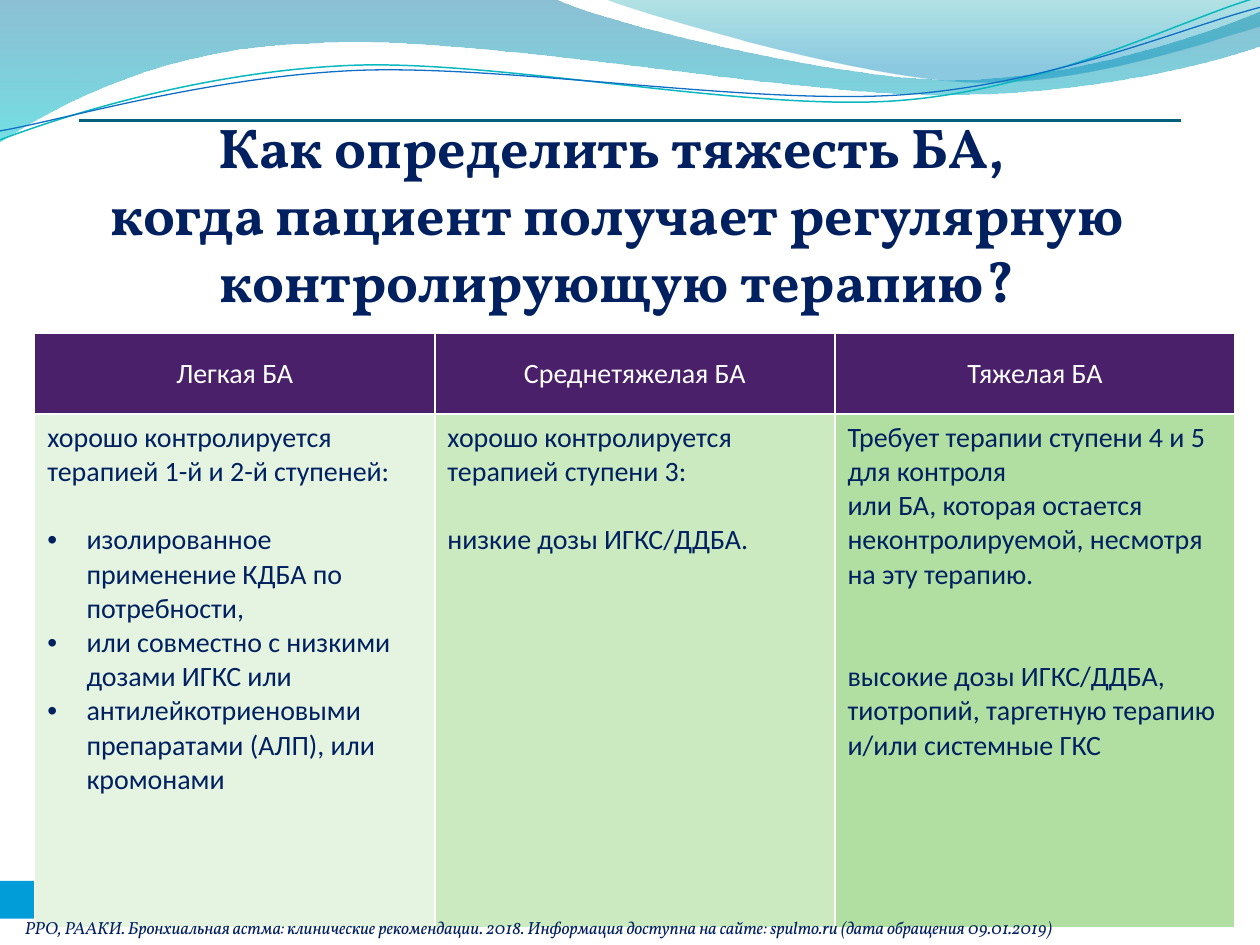
from dataclasses import dataclass
from typing import Optional

from lxml.etree import SubElement
from pptx import Presentation
from pptx.dml.color import RGBColor
from pptx.enum.shapes import MSO_CONNECTOR, MSO_SHAPE
from pptx.enum.text import MSO_ANCHOR, PP_ALIGN
from pptx.oxml import parse_xml
from pptx.oxml.ns import nsdecls, qn
from pptx.util import Cm, Pt


@dataclass(frozen=True)
class Theme:
    navy: str = "002060"
    white: str = "FFFFFF"
    header: str = "4A206A"
    accent: str = "009DD9"
    rule: str = "04617B"
    serif: str = "Vollkorn"
    sans: str = "Calibri"
    title_size: float = 32
    table_size: float = 16
    source_size: float = 10
    blank_line: float = 19.5


@dataclass(frozen=True)
class Stop:
    position: float
    color: str
    opacity: int


@dataclass(frozen=True)
class Wave:
    """A path in cm; a segment of one point is straight, of three is a Bezier curve."""
    start: tuple
    segments: tuple
    stops: tuple = ()
    line: Optional[str] = None
    width: float = 0


@dataclass(frozen=True)
class Entry:
    text: str
    bullet: bool = False
    lines_before: int = 0


@dataclass(frozen=True)
class Severity:
    name: str
    color: str
    entries: tuple


THEME = Theme()

WAVES = (
    Wave((0, 0), (
        ((11.18, -0.03),),
        ((12.09, 0.43), (16.87, 1.6), (19.25, 1.6)),
        ((21.67, 1.6), (24.33, 0.66), (25.4, 0.23)),
        ((25.43, 0.91),),
        ((24.97, 1.12), (22.1, 1.93), (18.95, 1.91)),
        ((15.8, 1.91), (9.7, 0.71), (6.53, 0.86)),
        ((3.28, 0.91), (1.17, 2.11), (-0.03, 2.87)),
        ((0, 0),),
    ), stops=(Stop(0, "0074A1", 45), Stop(1, "00C6CF", 55))),
    Wave((12.17, -0.03), (
        ((12.93, 0.28), (17.32, 1.57), (19.53, 1.65)),
        ((21.74, 1.75), (24.41, 0.81), (25.4, 0.53)),
        ((25.4, 0),),
        ((12.17, -0.03),),
    ), stops=(Stop(0, "00A1A9", 30), Stop(0.8, "008BBF", 45))),
    Wave((0, 2.82), (
        ((1.22, 2.36), (4.01, 1.45), (7.04, 1.32)),
        ((10.03, 1.19), (15.06, 2.26), (18.11, 2.03)),
        ((21.16, 1.8), (23.83, 0.38), (25.35, -0.05)),
    ), line="0AB8BF", width=0.85),
    Wave((0, 2.64), (
        ((1.19, 2.44), (4.17, 1.55), (7.19, 1.42)),
        ((10.24, 1.3), (15.16, 2.13), (18.21, 1.91)),
        ((21.23, 1.7), (23.9, 0.53), (25.4, 0.15)),
    ), line="0F6FC6", width=0.75),
)

SEVERITIES = (
    Severity("Легкая БА", "E5F4E0", (
        Entry("хорошо контролируется терапией 1-й и 2-й ступеней:"),
        Entry("изолированное применение КДБА по потребности,", True, 1),
        Entry("или совместно с низкими дозами ИГКС или", True),
        Entry("антилейкотриеновыми препаратами (АЛП), или кромонами", True),
    )),
    Severity("Среднетяжелая БА", "CBEAC0", (
        Entry("хорошо контролируется терапией ступени 3:"),
        Entry("низкие дозы ИГКС/ДДБА.", lines_before=1),
    )),
    Severity("Тяжелая БА", "B0DFA1", (
        Entry("Требует терапии ступени 4 и 5 для контроля"),
        Entry("или БА, которая остается неконтролируемой, несмотря на эту терапию."),
        Entry("высокие дозы ИГКС/ДДБА, тиотропий, таргетную терапию "
              "и/или системные ГКС", lines_before=2),
    )),
)


def rgb(color: str) -> RGBColor:
    return RGBColor.from_string(color)


def bend_segments(shape, segments: tuple) -> None:
    """Turn the straight steps of a freeform into Bezier curves where three points are given."""
    steps = list(shape.element.iter(qn("a:lnTo")))
    for step, segment in zip(steps, segments):
        if len(segment) == 3:
            points = "".join(f'<a:pt x="{Cm(x) - shape.left}" y="{Cm(y) - shape.top}"/>'
                             for x, y in segment)
            curve = parse_xml(f'<a:cubicBezTo {nsdecls("a")}>{points}</a:cubicBezTo>')
            step.getparent().replace(step, curve)


def draw_wave(page, wave: Wave) -> None:
    builder = page.shapes.build_freeform(*(Cm(value) for value in wave.start))
    ends = [(Cm(x), Cm(y)) for x, y in (segment[-1] for segment in wave.segments)]
    builder.add_line_segments(ends, close=bool(wave.stops))
    shape = builder.convert_to_shape()
    bend_segments(shape, wave.segments)
    shape.shadow.inherit = False
    if wave.stops:
        shape.line.fill.background()
        shape.fill.gradient()
        shape.fill.gradient_angle = 270
        for target, stop in zip(shape.fill.gradient_stops, wave.stops):
            target.color.rgb = rgb(stop.color)
            target.position = stop.position
        for node, stop in zip(shape.element.spPr.iter(qn("a:srgbClr")), wave.stops):
            SubElement(node, qn("a:alpha"), val=str(stop.opacity * 1000))
    else:
        shape.fill.background()
        shape.line.color.rgb = rgb(wave.line)
        shape.line.width = Pt(wave.width)


def draw_bar(page) -> None:
    bar = page.shapes.add_shape(MSO_SHAPE.RECTANGLE, 0, Cm(17.76), Cm(19.48), Cm(0.76))
    bar.shadow.inherit = False
    bar.fill.solid()
    bar.fill.fore_color.rgb = rgb(THEME.accent)
    bar.line.fill.background()


def draw_rule(page) -> None:
    rule = page.shapes.add_connector(
        MSO_CONNECTOR.STRAIGHT, Cm(1.6), Cm(2.43), Cm(23.8), Cm(2.43))
    rule.line.color.rgb = rgb(THEME.rule)
    rule.line.width = Pt(2)
    SubElement(rule.element.spPr, qn("a:effectLst"))


def style_paragraph(para, family: str, size: float, color: str,
                    bold: bool = False, italic: bool = False) -> None:
    for span in para.runs:
        font = span.font
        font.name, font.size, font.bold, font.italic = family, Pt(size), bold, italic
        font.color.rgb = rgb(color)


def draw_title(page) -> None:
    box = page.shapes.add_textbox(Cm(1.5), Cm(2.14), Cm(21.89), Cm(4.19))
    frame = box.text_frame
    frame.word_wrap = True
    frame.vertical_anchor = MSO_ANCHOR.BOTTOM
    frame.margin_left = frame.margin_right = frame.margin_bottom = 0
    frame.text = ("Как определить тяжесть БА, \v"
                  "когда пациент получает регулярную контролирующую терапию?")
    para = frame.paragraphs[0]
    para.alignment = PP_ALIGN.CENTER
    style_paragraph(para, THEME.serif, THEME.title_size, THEME.navy, bold=True)


def draw_source(page) -> None:
    box = page.shapes.add_textbox(Cm(0.25), Cm(18.36), Cm(23.57), Cm(0.69))
    box.text_frame.word_wrap = True
    box.text_frame.text = (
        "РРО, РААКИ. Бронхиальная астма: клинические рекомендации. 2018. "
        "Информация доступна на сайте: spulmo.ru (дата обращения 09.01.2019)")
    style_paragraph(box.text_frame.paragraphs[0], THEME.serif, THEME.source_size,
                    THEME.navy, italic=True)


def paint_cell(cell, color: str) -> None:
    """Fill the cell and give it white borders, which precede the fill in the XML."""
    cell.fill.solid()
    cell.fill.fore_color.rgb = rgb(color)
    properties = cell._tc.get_or_add_tcPr()
    for index, side in enumerate("LRTB"):
        properties.insert(index, parse_xml(
            f'<a:ln{side} {nsdecls("a")} w="{Pt(1)}"><a:solidFill>'
            f'<a:srgbClr val="{THEME.white}"/></a:solidFill></a:ln{side}>'))


def add_bullet(para) -> None:
    properties = para._p.get_or_add_pPr()
    properties.set("marL", str(Cm(0.79)))
    properties.set("indent", str(-Cm(0.79)))
    SubElement(properties, qn("a:buFont"), typeface="Arial")
    SubElement(properties, qn("a:buChar"), char="•")


def fill_column(table, column: int, severity: Severity) -> None:
    header, body = table.cell(0, column), table.cell(1, column)
    paint_cell(header, THEME.header)
    header.vertical_anchor = MSO_ANCHOR.MIDDLE
    header.text_frame.text = severity.name
    para = header.text_frame.paragraphs[0]
    para.alignment = PP_ALIGN.CENTER
    style_paragraph(para, THEME.sans, THEME.table_size, THEME.white)

    paint_cell(body, severity.color)
    body.text_frame.text = "\n".join(entry.text for entry in severity.entries)
    for para, entry in zip(body.text_frame.paragraphs, severity.entries):
        style_paragraph(para, THEME.sans, THEME.table_size, THEME.navy)
        if entry.lines_before:
            para.space_before = Pt(entry.lines_before * THEME.blank_line)
        if entry.bullet:
            add_bullet(para)


def draw_table(page) -> None:
    table = page.shapes.add_table(2, len(SEVERITIES), Cm(0.7), Cm(6.72),
                                  Cm(24.2), Cm(11.99)).table
    table.horz_banding = False
    table.rows[0].height, table.rows[1].height = Cm(1.63), Cm(10.36)
    for column, severity in enumerate(SEVERITIES):
        fill_column(table, column, severity)


def main() -> None:
    deck = Presentation()
    deck.slide_width, deck.slide_height = Cm(25.4), Cm(19.05)
    page = deck.slides.add_slide(deck.slide_layouts[6])
    for wave in WAVES:
        draw_wave(page, wave)
    draw_bar(page)
    draw_rule(page)
    draw_title(page)
    draw_table(page)
    draw_source(page)
    deck.save("out.pptx")


if __name__ == "__main__":
    main()
